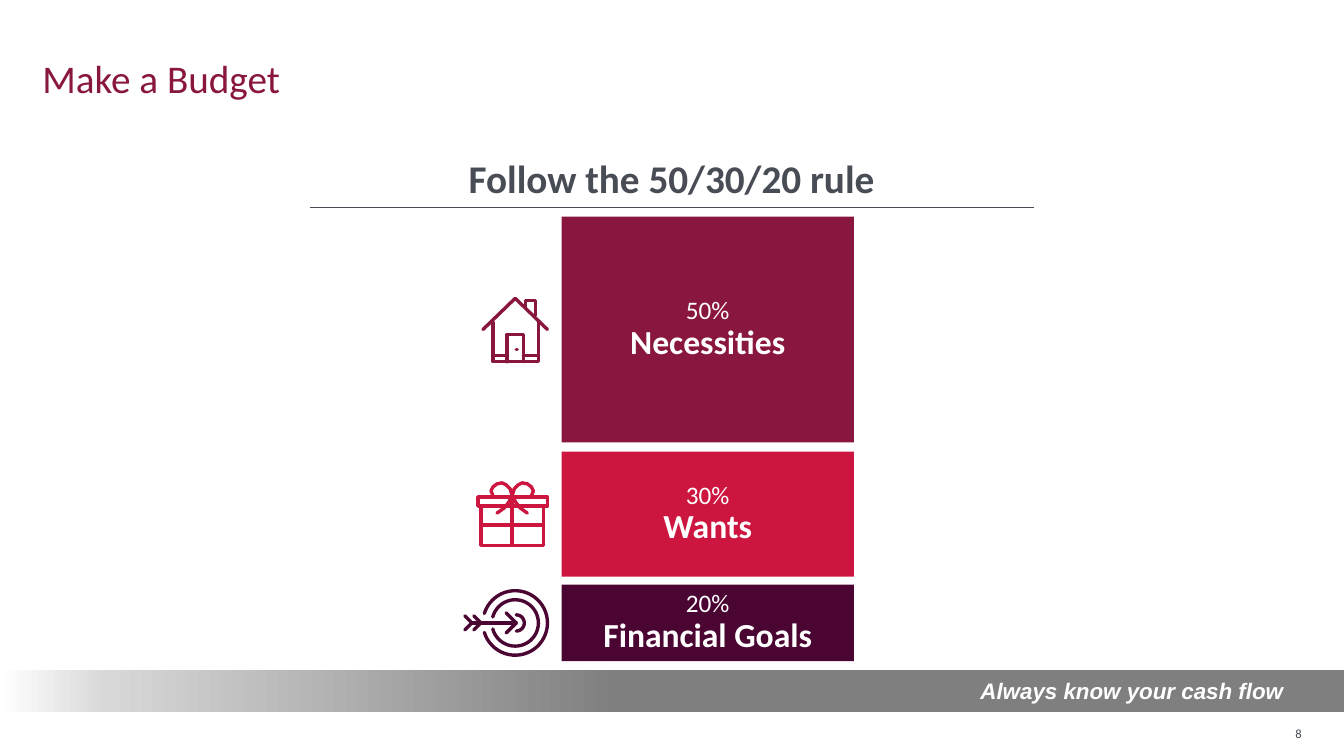
from math import cos, radians, sin

from lxml.etree import SubElement
from copy import deepcopy
from pptx import Presentation
from pptx.dml.color import RGBColor
from pptx.enum.shapes import MSO_CONNECTOR, MSO_SHAPE
from pptx.enum.text import MSO_ANCHOR, MSO_AUTO_SIZE, PP_ALIGN
from pptx.oxml.ns import qn
from pptx.util import Inches, Pt

COLORS = {
    "maroon": "89163E",
    "red": "CD163F",
    "plum": "4B0532",
    "slate": "474C55",
    "white": "FFFFFF",
    "gray": "7F7F7F",
    "silver": "D8D8D8",
}

BARS = [
    ("50%", "Necessities", 2.15, 2.24, "maroon"),
    ("30%", "Wants", 4.48, 1.24, "red"),
    ("20%", "Financial Goals", 5.8, 0.76, "plum"),
]


def color(name):
    return RGBColor.from_string(COLORS[name])


def set_frame(shape, anchor, insets=(0.1, 0.05, 0.1, 0.05)):
    frame = shape.text_frame
    frame.word_wrap = True
    frame.auto_size = MSO_AUTO_SIZE.NONE
    frame.vertical_anchor = anchor
    frame.margin_left, frame.margin_top, frame.margin_right, frame.margin_bottom = map(Inches, insets)
    return frame


def add_run(paragraph, text, size, color_name, bold=False, italic=False, font="Calibri"):
    run = paragraph.add_run()
    run.text = text
    run.font.name = font
    run.font.size = Pt(size)
    run.font.bold = bold
    run.font.italic = italic
    run.font.color.rgb = color(color_name)


def add_title(slide, text):
    title = slide.shapes.title
    title.left, title.top, title.width, title.height = map(Inches, (0.38, 0, 11.05, 1.01))
    paragraph = set_frame(title, MSO_ANCHOR.BOTTOM, (0.04, 0, 0.04, 0)).paragraphs[0]
    paragraph.alignment = PP_ALIGN.LEFT
    paragraph.line_spacing = 0.9
    add_run(paragraph, text, 28, "maroon")


def add_text(slide, box, text, size, alignment, anchor, insets, bold=False):
    shape = slide.shapes.add_textbox(*map(Inches, box))
    paragraph = set_frame(shape, anchor, insets).paragraphs[0]
    paragraph.alignment = alignment
    add_run(paragraph, text, size, "slate", bold)
    return shape


def add_rectangle(slide, left, top, width, height):
    shape = slide.shapes.add_shape(MSO_SHAPE.RECTANGLE, *map(Inches, (left, top, width, height)))
    shape.shadow.inherit = False
    shape.line.fill.background()
    return shape


def add_bar(slide, share, label, top, height, color_name):
    bar = add_rectangle(slide, 5.57, top, 2.9, height)
    bar.fill.solid()
    bar.fill.fore_color.rgb = color(color_name)
    frame = set_frame(bar, MSO_ANCHOR.MIDDLE)
    for paragraph, text, size, bold in (
        (frame.paragraphs[0], share, 18, False),
        (frame.add_paragraph(), label, 24, True),
    ):
        paragraph.alignment = PP_ALIGN.CENTER
        paragraph.line_spacing = 0.9
        add_run(paragraph, text, size, "white", bold)


def add_rule(slide, start, end, y):
    rule = slide.shapes.add_connector(
        MSO_CONNECTOR.STRAIGHT, Inches(start), Inches(y), Inches(end), Inches(y)
    )
    rule.line.color.rgb = color("slate")
    rule.line.width = Pt(0.5)
    SubElement(rule._element.spPr, qn("a:effectLst"))


def add_icon(slide, strokes, color_name):
    paths = [[(Inches(x), Inches(y)) for x, y in stroke] for stroke in strokes]
    builder = slide.shapes.build_freeform(*paths[0][0])
    for index, path in enumerate(paths):
        if index:
            builder.move_to(*path[0])
        builder.add_line_segments(path[1:], close=False)
    icon = builder.convert_to_shape()
    icon.shadow.inherit = False
    icon.fill.background()
    icon.line.color.rgb = color(color_name)
    icon.line.width = Pt(2.4)
    line = icon._element.spPr.find(qn("a:ln"))
    line.set("cap", "rnd")
    SubElement(line, qn("a:round"))


def box_stroke(left, top, right, bottom):
    return [(left, top), (right, top), (right, bottom), (left, bottom), (left, top)]


def arc_stroke(x, y, radius, sweep):
    angles = [radians(sweep * step / 24) for step in range(-24, 25)]
    return [(x + radius * cos(angle), y + radius * sin(angle)) for angle in angles]


def house_strokes():
    roof = [(4.79, 3.27), (5.11, 2.96), (5.43, 3.27)]
    walls = [(4.89, 3.2), (4.89, 3.59), (5.34, 3.59), (5.34, 3.2)]
    door = [(5.03, 3.59), (5.03, 3.32), (5.19, 3.32), (5.19, 3.59)]
    chimney = [(5.21, 3.04), (5.21, 2.98), (5.31, 2.98), (5.31, 3.13)]
    skirting = [[(4.89, 3.53), (5.03, 3.53)], [(5.19, 3.53), (5.34, 3.53)]]
    knob = [(5.12, 3.47), (5.13, 3.47)]
    return [roof, walls, door, chimney, *skirting, knob]


def gift_strokes():
    center = 5.08
    loop = [(0.19, 4.92), (0.21, 4.87), (0.19, 4.83), (0.15, 4.8), (0.1, 4.79),
            (0.06, 4.81), (0.02, 4.85), (0, 4.92)]
    tail = [(0, 4.92), (0.04, 4.99), (0.08, 5.04), (0.15, 5.09)]
    bow = [
        [(center + side * offset, y) for offset, y in stroke]
        for side in (-1, 1) for stroke in (loop, tail)
    ]
    ribbon = [[(center, 4.87), (center, 5.41)], [(4.77, 5.21), (5.39, 5.21)]]
    return [box_stroke(4.74, 4.93, 5.43, 5.02), box_stroke(4.77, 5.02, 5.39, 5.41), *ribbon, *bow]


def target_strokes():
    middle = 6.18
    rings = [
        arc_stroke(5.11, middle, 0.32, 163),
        arc_stroke(5.11, middle, 0.23, 165),
        arc_stroke(5.12, middle, 0.08, 90),
    ]
    chevrons = [
        [(tip - reach, middle - reach), (tip, middle), (tip - reach, middle + reach)]
        for tip, reach in ((4.68, 0.07), (4.77, 0.07), (5.12, 0.1))
    ]
    return [*rings, *chevrons, [(4.68, middle), (5.12, middle)]]


def add_footer(slide, text):
    footer = add_rectangle(slide, 0, 6.65, 13.33, 0.41)
    footer.fill.gradient()
    footer.fill.gradient_angle = 180
    stop_list = footer._element.spPr.find(qn("a:gradFill")).find(qn("a:gsLst"))
    stop_list.append(deepcopy(stop_list[0]))
    stops = ((0.54, "gray"), (0.92, "silver"), (1, "white"))
    for stop, (position, color_name) in zip(footer.fill.gradient_stops, stops):
        stop.position = position
        stop.color.rgb = color(color_name)
    paragraph = set_frame(footer, MSO_ANCHOR.MIDDLE, (0.1, 0.05, 0.6, 0.05)).paragraphs[0]
    paragraph.alignment = PP_ALIGN.RIGHT
    add_run(paragraph, text, 16, "white", bold=True, italic=True, font="Arial")


def main():
    presentation = Presentation()
    presentation.slide_width = Inches(13.33)
    presentation.slide_height = Inches(7.5)
    slide = presentation.slides.add_slide(presentation.slide_layouts[5])
    add_title(slide, "Make a Budget")
    add_text(slide, (12.5, 7.21, 0.41, 0.14), "8", 9, PP_ALIGN.RIGHT, MSO_ANCHOR.MIDDLE, (0, 0, 0, 0))
    for bar in BARS:
        add_bar(slide, *bar)
    add_rule(slide, 3.07, 10.26, 2.06)
    heading = add_text(slide, (3.07, 1.48, 7.18, 0.57), "Follow the 50/30/20 rule", 28,
                       PP_ALIGN.CENTER, MSO_ANCHOR.BOTTOM, (0.1, 0.05, 0.1, 0.05), bold=True)
    heading.text_frame.auto_size = MSO_AUTO_SIZE.SHAPE_TO_FIT_TEXT
    add_icon(slide, house_strokes(), "maroon")
    add_icon(slide, gift_strokes(), "red")
    add_icon(slide, target_strokes(), "plum")
    add_footer(slide, "Always know your cash flow")
    presentation.save("out.pptx")


if __name__ == "__main__":
    main()
